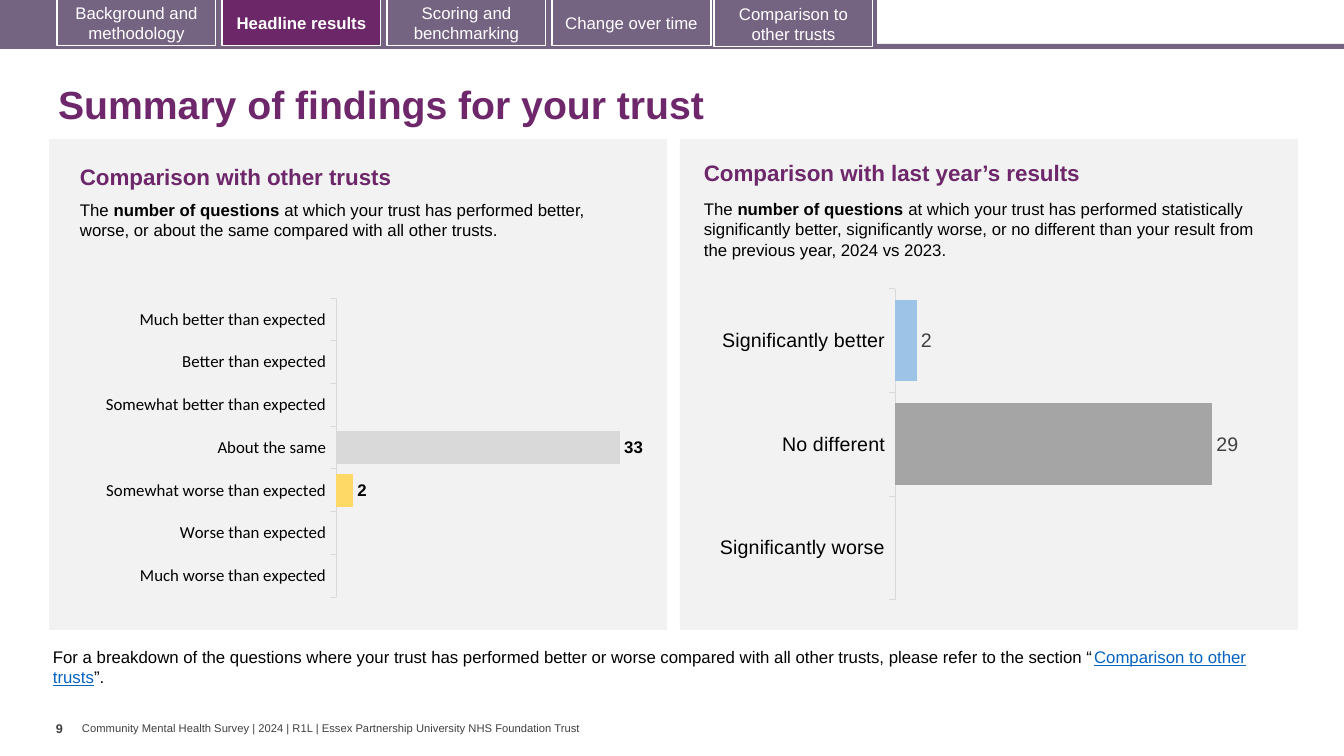
from dataclasses import dataclass

from lxml.etree import SubElement
from pptx import Presentation
from pptx.chart.data import CategoryChartData
from pptx.dml.color import RGBColor
from pptx.enum.chart import XL_CHART_TYPE as ChartType
from pptx.enum.chart import XL_LABEL_POSITION as LabelPosition
from pptx.enum.chart import XL_TICK_MARK as TickMark
from pptx.enum.shapes import MSO_SHAPE as Preset
from pptx.enum.text import MSO_ANCHOR as Anchor
from pptx.enum.text import PP_ALIGN as Align
from pptx.oxml.ns import qn
from pptx.util import Emu, Pt

SLIDE_WIDTH, SLIDE_HEIGHT = 1344, 756
PX = 12192000 / SLIDE_WIDTH


def px(*lengths):
    return [Emu(round(length * PX)) for length in lengths]


@dataclass(frozen=True)
class Theme:
    font: str = "Arial"
    chart_font: str = "Calibri"
    # Colours
    black: str = "000000"
    white: str = "FFFFFF"
    grey: str = "404040"
    axis: str = "D9D9D9"
    panel: str = "F2F2F2"
    header: str = "756382"
    active: str = "6B2768"
    heading: str = "6D276A"
    link: str = "0563C1"
    # Type sizes
    title_size: int = 28
    heading_size: int = 16
    chart_size: int = 14
    body_size: int = 12
    number_size: int = 9
    footer_size: int = 8


class SlideBuilder:
    def __init__(self, slide, theme):
        self.slide = slide
        self.theme = theme

    def style_font(self, font, size, color, **options):
        values = {"name": self.theme.font, "size": Pt(size), "bold": False, **options}
        for name, value in values.items():
            setattr(font, name, value)
        font.color.rgb = RGBColor.from_string(color)

    def fill_text(self, frame, runs, size, color, align=Align.LEFT, **frame_format):
        """Fill a text frame with (text, font options) runs."""
        for name, value in {"word_wrap": True, **frame_format}.items():
            setattr(frame, name, value)
        paragraph = frame.paragraphs[0]
        paragraph.alignment = align
        for text, options in runs:
            run = paragraph.add_run()
            run.text = text
            self.style_font(run.font, size, **{"color": color, **options})
        return paragraph

    def title(self, text, box):
        shape = self.slide.shapes.title
        shape.left, shape.top, shape.width, shape.height = px(*box)
        paragraph = self.fill_text(shape.text_frame, [(text, {"bold": True})],
                                   self.theme.title_size, self.theme.heading,
                                   vertical_anchor=Anchor.MIDDLE)
        paragraph.line_spacing = 0.9

    def text(self, runs, box, size, color, **frame_format):
        shape = self.slide.shapes.add_textbox(*px(*box))
        self.fill_text(shape.text_frame, runs, size, color, **frame_format)

    def rectangle(self, box, fill, line=None):
        shape = self.slide.shapes.add_shape(Preset.RECTANGLE, *px(*box))
        shape.shadow.inherit = False
        shape.fill.solid()
        shape.fill.fore_color.rgb = RGBColor.from_string(fill)
        if line:
            shape.line.color.rgb = RGBColor.from_string(line)
            shape.line.width = Pt(0.75)
        else:
            shape.line.fill.background()
        return shape

    def tab(self, label, box, active):
        theme = self.theme
        shape = self.rectangle(box, theme.active if active else theme.header, theme.white)
        self.fill_text(shape.text_frame, [(label, {"bold": active})], theme.body_size,
                       theme.white, Align.CENTER, vertical_anchor=Anchor.MIDDLE)

    def bar_chart(self, box, bars, plot_area, size, axis_font, label_color, bold_labels):
        """Draw bars given as (category, value, colour) from top to bottom."""
        theme = self.theme
        data = CategoryChartData(number_format="0")
        data.categories = [category for category, _, _ in bars]
        data.add_series("Series 1", [value for _, value, _ in bars])
        chart = self.slide.shapes.add_chart(ChartType.BAR_CLUSTERED, *px(*box), data).chart
        chart.has_legend = chart.has_title = False
        self.style_font(chart.font, size, theme.black, name=axis_font)

        # Axes
        axis = chart.category_axis
        axis.reverse_order = True
        axis.major_tick_mark = TickMark.OUTSIDE
        axis.format.line.color.rgb = RGBColor.from_string(theme.axis)
        axis.format.line.width = Pt(0.75)
        self.style_font(axis.tick_labels.font, size, theme.black, name=axis_font)
        scale = {"visible": False, "has_major_gridlines": False,
                 "minimum_scale": 0, "maximum_scale": 35}
        for name, value in scale.items():
            setattr(chart.value_axis, name, value)

        # Bars and value labels
        plot = chart.plots[0]
        plot.gap_width = 27
        plot.vary_by_categories = False
        series = plot.series[0]
        series.invert_if_negative = False
        for index, (_, _, color) in enumerate(bars):
            fill = series.points[index].format.fill
            fill.solid()
            fill.fore_color.rgb = RGBColor.from_string(color)
        labels = series.data_labels
        label_format = {"show_value": True, "position": LabelPosition.OUTSIDE_END,
                        "number_format": "0", "number_format_is_linked": False}
        for name, value in label_format.items():
            setattr(labels, name, value)
        self.style_font(labels.font, size, label_color, bold=bold_labels)

        # Inner plot area as fractions of the chart
        area = chart._chartSpace.chart.plotArea
        for old_layout in area.findall(qn("c:layout")):
            area.remove(old_layout)
        layout = SubElement(area, qn("c:layout"))
        area.insert(0, layout)
        manual = SubElement(layout, qn("c:manualLayout"))
        settings = [("layoutTarget", "inner"), ("xMode", "edge"), ("yMode", "edge"),
                    *zip("xywh", plot_area)]
        for tag, value in settings:
            SubElement(manual, qn(f"c:{tag}")).set("val", str(value))


def main():
    presentation = Presentation()
    presentation.slide_width, presentation.slide_height = px(SLIDE_WIDTH, SLIDE_HEIGHT)
    slide = presentation.slides.add_slide(presentation.slide_layouts[5])
    theme = Theme()
    builder = SlideBuilder(slide, theme)
    bold = {"bold": True}

    # Header band and navigation tabs
    builder.rectangle((0, 44, SLIDE_WIDTH, 5), theme.header)
    builder.rectangle((0, 0, 877, 47), theme.header)
    tabs = ["Background and methodology", "Headline results", "Scoring and benchmarking",
            "Change over time"]
    for index, label in enumerate(tabs):
        builder.tab(label, (57 + 165 * index, -1, 159, 47), label == "Headline results")
    builder.tab("Comparison to other trusts", (714, 0, 159, 47), False)

    builder.title("Summary of findings for your trust", (48, 71, 1259, 72))

    # Panels with heading and introduction
    panels = [
        (49, "Comparison with other trusts", (70, 158, 556, 37), (70, 195, 533, 72),
         "at which your trust has performed better, worse, or about the same compared "
         "with all other trusts."),
        (680, "Comparison with last year’s results", (694, 154, 552, 37),
         (694, 194, 579, 72),
         "at which your trust has performed statistically significantly better, "
         "significantly worse, or no different than your result from the previous year, "
         "2024 vs 2023."),
    ]
    for left, heading, heading_box, intro_box, intro in panels:
        builder.rectangle((left, 139, 618, 491), theme.panel)
        builder.text([(heading, bold)], heading_box, theme.heading_size, theme.heading)
        builder.text([("The ", {}), ("number of questions ", bold), (intro, {})],
                     intro_box, theme.body_size, theme.black)

    # Charts
    trust_bars = [
        ("Much better than expected", None, "419999"),
        ("Better than expected", None, "5FBD83"),
        ("Somewhat better than expected", None, "A9D18E"),
        ("About the same", 33, "D9D9D9"),
        ("Somewhat worse than expected", 2, "FFD966"),
        ("Worse than expected", None, "F1BE48"),
        ("Much worse than expected", None, "E87722"),
    ]
    year_bars = [("Significantly better", 2, "9DC3E6"), ("No different", 29, "A5A5A5"),
                 ("Significantly worse", None, "7030A0")]
    builder.bar_chart((41, 274, 628, 344), trust_bars, (0.47, 0.07, 0.48, 0.87),
                      theme.body_size, theme.chart_font, theme.black, True)
    builder.bar_chart((669, 275, 628, 342), year_bars, (0.36, 0.04, 0.61, 0.91),
                      theme.chart_size, theme.font, theme.grey, False)

    # Reference note
    note = [("For a breakdown of the questions where your trust has performed better or worse "
             "compared with all other trusts, please refer to the section “", {}),
            ("Comparison to other trusts", {"color": theme.link, "underline": True}),
            ("”.", {})]
    builder.text(note, (43, 642, 1231, 50), theme.body_size, theme.black)

    # Page number and footer
    flush = {"margin_left": 0, "margin_right": 0, "word_wrap": False}
    builder.text([("9", bold)], (56, 716, 25, 40), theme.number_size, theme.grey, **flush)
    builder.text([("Community Mental Health Survey | 2024 | R1L | "
                   "Essex Partnership University NHS Foundation Trust", {})],
                 (82, 722, 505, 13), theme.footer_size, theme.grey, **flush,
                 margin_top=0, margin_bottom=0, vertical_anchor=Anchor.MIDDLE)

    presentation.save("out.pptx")


if __name__ == "__main__":
    main()
